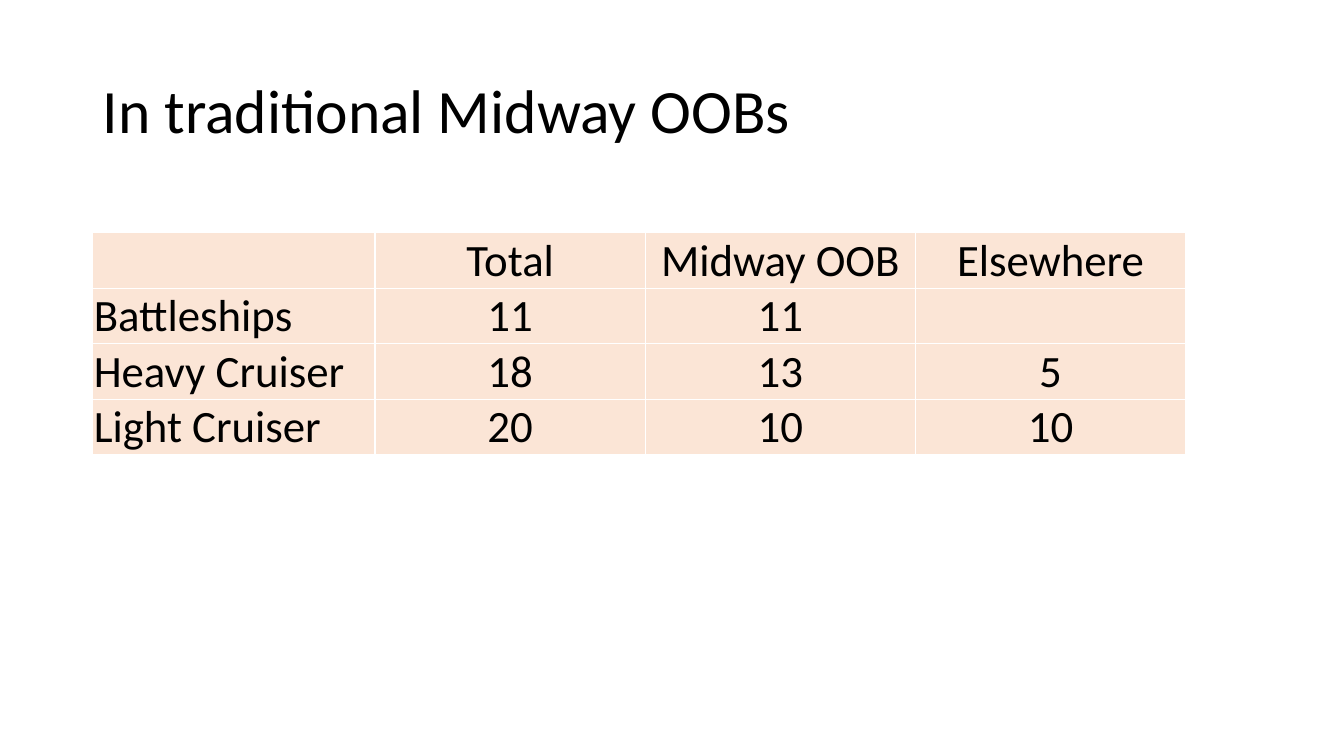
from dataclasses import dataclass

import pptx
import pptx.dml.color
import pptx.enum.text
import pptx.oxml
import pptx.oxml.ns
import pptx.util
from pptx.util import Inches


@dataclass(frozen=True)
class Theme:
    font: str = "Calibri"
    title_size: int = 44
    table_size: int = 32
    text: str = "000000"
    cell_fill: str = "FBE5D6"
    border: str = "FFFFFF"


THEME = Theme()
ALIGN = pptx.enum.text.PP_ALIGN
ANCHOR = pptx.enum.text.MSO_ANCHOR

SHIP_ROWS = [
    ["", "Total", "Midway OOB", "Elsewhere"],
    ["Battleships", "11", "11", ""],
    ["Heavy Cruiser", "18", "13", "5"],
    ["Light Cruiser", "20", "10", "10"],
]
COLUMN_WIDTHS = [2.8, 2.68, 2.68, 2.68]
ROW_HEIGHT = 0.55


def rgb(value):
    return pptx.dml.color.RGBColor.from_string(value)


def write_text(frame, text, size, align):
    frame.text = text
    para = frame.paragraphs[0]
    para.alignment = align
    for span in para.runs:
        span.font.name = THEME.font
        span.font.size = pptx.util.Pt(size)
        span.font.color.rgb = rgb(THEME.text)


def add_title(page, text):
    box = page.shapes.add_textbox(Inches(0.92), Inches(0.4), Inches(11.5), Inches(1.45))
    frame = box.text_frame
    frame.word_wrap = True
    frame.vertical_anchor = ANCHOR.MIDDLE
    write_text(frame, text, THEME.title_size, ALIGN.LEFT)
    frame.paragraphs[0].line_spacing = 0.9


def add_borders(cell):
    """Draw a 1 pt line on every side; call before the fill is set."""
    properties = cell._tc.get_or_add_tcPr()
    for side in ("lnL", "lnR", "lnT", "lnB"):
        properties.append(pptx.oxml.parse_xml(
            f'<a:{side} {pptx.oxml.ns.nsdecls("a")} w="{pptx.util.Pt(1)}">'
            f'<a:solidFill><a:srgbClr val="{THEME.border}"/></a:solidFill></a:{side}>'
        ))


def style_cell(cell):
    cell.margin_left = cell.margin_right = cell.margin_top = Inches(0.01)
    cell.margin_bottom = 0
    cell.vertical_anchor = ANCHOR.BOTTOM
    add_borders(cell)
    cell.fill.solid()
    cell.fill.fore_color.rgb = rgb(THEME.cell_fill)


def add_ship_table(page):
    table = page.shapes.add_table(
        len(SHIP_ROWS), len(COLUMN_WIDTHS), Inches(0.92), Inches(2.31),
        Inches(sum(COLUMN_WIDTHS)), Inches(ROW_HEIGHT * len(SHIP_ROWS)),
    ).table
    table.first_row = False
    table.horz_banding = False
    for column, width in zip(table.columns, COLUMN_WIDTHS):
        column.width = Inches(width)
    for row, texts in zip(table.rows, SHIP_ROWS):
        row.height = Inches(ROW_HEIGHT)
        for index, (cell, text) in enumerate(zip(row.cells, texts)):
            style_cell(cell)
            align = ALIGN.CENTER if index else ALIGN.LEFT
            write_text(cell.text_frame, text, THEME.table_size, align)


def main():
    deck = pptx.Presentation()
    deck.slide_width = Inches(13.33)
    deck.slide_height = Inches(7.5)
    page = deck.slides.add_slide(deck.slide_layouts[6])
    add_title(page, "In traditional Midway OOBs")
    add_ship_table(page)
    deck.save("out.pptx")


if __name__ == "__main__":
    main()
